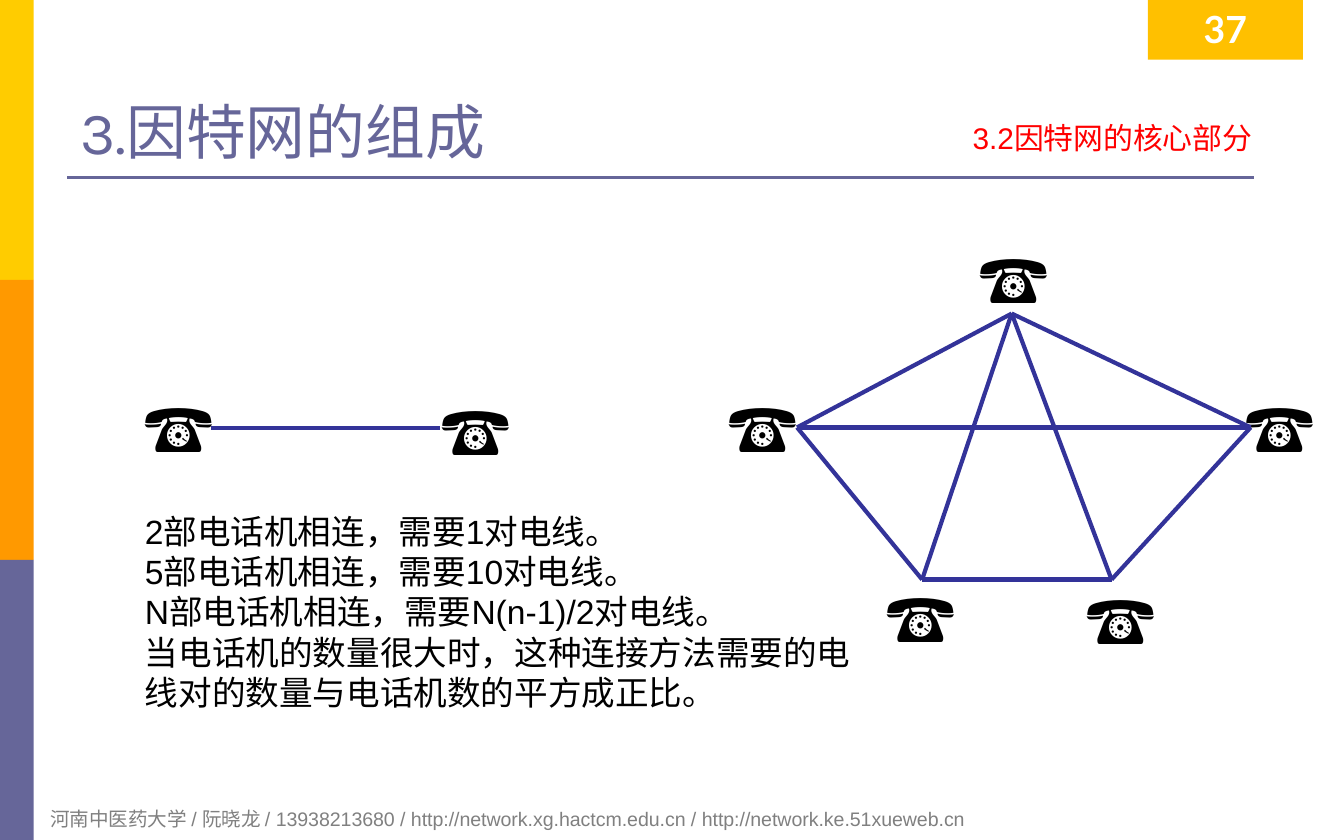
"""Build the slide on fully connected telephones."""
from dataclasses import dataclass
from itertools import combinations

from lxml import etree
from pptx import Presentation
from pptx import util as u
from pptx.dml.color import RGBColor
from pptx.enum import shapes, text
from pptx.oxml.ns import qn


@dataclass(frozen=True)
class Theme:
    violet: str = "666699"
    yellow: str = "FFCC00"
    orange: str = "FF9900"
    amber: str = "FFC000"
    wire: str = "333399"
    red: str = "FF0000"
    gray: str = "808080"
    black: str = "000000"
    white: str = "FFFFFF"
    title_size: float = 32
    phone_size: float = 36
    number_size: float = 20
    body_size: float = 18
    section_size: float = 16
    footer_size: float = 10.5


@dataclass(frozen=True)
class Box:
    left: float
    top: float
    width: float
    height: float

    def lengths(self):
        return [u.Pt(value) for value in (self.left, self.top, self.width, self.height)]


@dataclass(frozen=True)
class Style:
    size: float
    color: str
    font: str = "Arial"
    bold: bool = False
    align: text.PP_ALIGN = text.PP_ALIGN.LEFT
    anchor: text.MSO_ANCHOR = text.MSO_ANCHOR.TOP


@dataclass(frozen=True)
class Point:
    x: float
    y: float


THEME = Theme()
PHONE_STYLE = Style(THEME.phone_size, THEME.black, "Times New Roman")
PHONES = (
    Point(383, 203), Point(468, 304.5), Point(660, 203), Point(575, 305.5),
    Point(517.5, 123), Point(70.5, 203), Point(229.5, 204.5),
)
NODES = {
    "top": Point(542, 168),
    "left": Point(427, 229),
    "right": Point(670, 229),
    "lower left": Point(494, 310.5),
    "lower right": Point(595.5, 310.5),
}
UNWIRED = {("left", "lower right"), ("right", "lower left")}
STATEMENTS = (
    "2部电话机相连，需要1对电线。",
    "5部电话机相连，需要10对电线。",
    "N部电话机相连，需要N(n-1)/2对电线。",
    "当电话机的数量很大时，这种连接方法需要的电线对的数量与电话机数的平方成正比。",
)
FOOTER = (
    "河南中医药大学 / 阮晓龙 / 13938213680 / "
    "http://network.xg.hactcm.edu.cn / http://network.ke.51xueweb.cn"
)


def write(shape, style: Style, *lines: str) -> None:
    frame = shape.text_frame
    frame.word_wrap = True
    frame.vertical_anchor = style.anchor
    frame.text = "\n".join(lines)
    for paragraph in frame.paragraphs:
        paragraph.alignment = style.align
        paragraph.font.size = u.Pt(style.size)
        paragraph.font.name = style.font
        paragraph.font.bold = style.bold
        paragraph.font.color.rgb = RGBColor.from_string(style.color)


def add_text(slide, box: Box, style: Style, *lines: str) -> None:
    write(slide.shapes.add_textbox(*box.lengths()), style, *lines)


def add_block(slide, box: Box, color: str):
    shape = slide.shapes.add_shape(shapes.MSO_SHAPE.RECTANGLE, *box.lengths())
    shape.shadow.inherit = False
    shape.fill.solid()
    shape.fill.fore_color.rgb = RGBColor.from_string(color)
    shape.line.fill.background()
    return shape


def add_line(slide, start: Point, end: Point, color: str, width: float) -> None:
    ends = [u.Pt(value) for value in (start.x, start.y, end.x, end.y)]
    line = slide.shapes.add_connector(shapes.MSO_CONNECTOR.STRAIGHT, *ends)
    line.line.color.rgb = RGBColor.from_string(color)
    line.line.width = u.Pt(width)
    etree.SubElement(line._element.spPr, qn("a:effectLst"))


def add_frame(slide) -> None:
    for row, color in enumerate((THEME.yellow, THEME.orange, THEME.violet)):
        add_block(slide, Box(0, 150 * row, 18, 150), color)
    add_line(slide, Point(36, 95), Point(672, 95), THEME.violet, 1.5)
    add_text(slide, Box(20, 429, 601, 20), Style(THEME.footer_size, THEME.gray), FOOTER)
    title = Style(THEME.title_size, THEME.violet, "Karla", anchor=text.MSO_ANCHOR.BOTTOM)
    add_text(slide, Box(36, 18, 648, 75), title, "3.因特网的组成")
    number = Style(THEME.number_size, THEME.white, "Lato", True,
                   text.PP_ALIGN.CENTER)
    write(add_block(slide, Box(615, 0, 83, 32), THEME.amber), number, "37")
    section = Style(THEME.section_size, THEME.red, align=text.PP_ALIGN.RIGHT)
    add_text(slide, Box(451, 60.5, 227, 28), section, "3.2因特网的核心部分")


def add_network(slide) -> None:
    for phone in PHONES:
        add_text(slide, Box(phone.x, phone.y, 62.5, 50.5), PHONE_STYLE, "☎")
    for pair in combinations(NODES, 2):
        if pair not in UNWIRED:
            add_line(slide, NODES[pair[0]], NODES[pair[1]], THEME.wire, 2.25)
    add_line(slide, Point(113, 229.5), Point(235.5, 229.5), THEME.wire, 2.25)


def main() -> None:
    presentation = Presentation()
    presentation.slide_width, presentation.slide_height = u.Pt(720), u.Pt(450)
    slide = presentation.slides.add_slide(presentation.slide_layouts[6])
    add_frame(slide)
    add_network(slide)
    add_text(slide, Box(70.5, 270, 405.5, 117), Style(THEME.body_size, THEME.black), *STATEMENTS)
    presentation.save("out.pptx")


if __name__ == "__main__":
    main()
